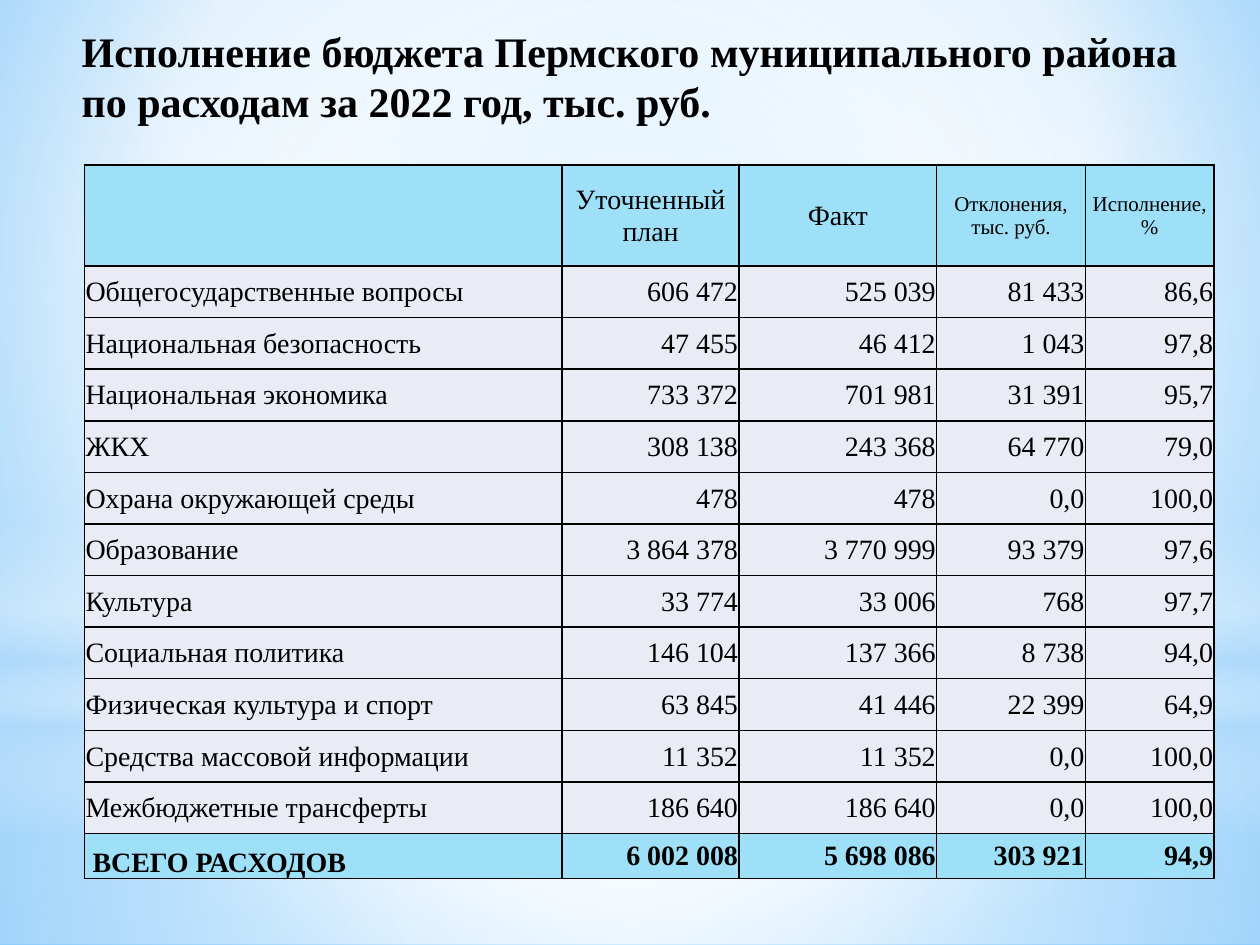
import pptx
import pptx.util
import pptx.oxml
import pptx.oxml.ns
import pptx.dml.color
import pptx.enum.text
import pptx.enum.shapes

Pt = pptx.util.Pt
ALIGN = pptx.enum.text.PP_ALIGN
ANCHOR = pptx.enum.text.MSO_ANCHOR
SHAPE = pptx.enum.shapes.MSO_SHAPE

# Content
TITLE = "Исполнение бюджета Пермского муниципального района по расходам за 2022 год, тыс. руб."
HEAD = ["", "Уточненный план", "Факт", "Отклонения,\nтыс. руб.", "Исполнение, %"]
ROWS = [
    ("Общегосударственные вопросы", "606 472", "525 039", "81 433", "86,6"),
    ("Национальная безопасность", "47 455", "46 412", "1 043", "97,8"),
    ("Национальная экономика", "733 372", "701 981", "31 391", "95,7"),
    ("ЖКХ", "308 138", "243 368", "64 770", "79,0"),
    ("Охрана окружающей среды", "478", "478", "0,0", "100,0"),
    ("Образование", "3 864 378", "3 770 999", "93 379", "97,6"),
    ("Культура", "33 774", "33 006", "768", "97,7"),
    ("Социальная политика", "146 104", "137 366", "8 738", "94,0"),
    ("Физическая культура и спорт", "63 845", "41 446", "22 399", "64,9"),
    ("Средства массовой информации", "11 352", "11 352", "0,0", "100,0"),
    ("Межбюджетные трансферты", "186 640", "186 640", "0,0", "100,0"),
]
TOTAL = (" ВСЕГО РАСХОДОВ", "6 002 008", "5 698 086", "303 921", "94,9")

THEME = {
    "font": "Times New Roman", "ink": "000000",
    "band": "9EE0F8", "cell": "E9EBF5",
    "title": 24, "body": 16, "small": 12,
}

# Gradient stops: position, colour, opacity in percent
MID = (50, 50, 50, 50)
BACK = [(0, "9ED5FF", 100), (60, "FFFFFF", 100), (100, "5BB9FF", 100)]
GLOW = [  # shape, box, stops, focus (None means top to bottom)
    (SHAPE.RECTANGLE, (0, 402, 720, 138),
     [(0, "FFFFFF", 91), (37, "FFFFFF", 76), (100, "B4DCFA", 79)], MID),
    (SHAPE.RECTANGLE, (0, 0, 720, 402),
     [(0, "FFFFFF", 89), (48, "FFFFFF", 62), (100, "B4DCFA", 79)], MID),
    (SHAPE.RECTANGLE, (0, 297, 720, 180),
     [(0, "FFFFFF", 0), (29, "FFFFFF", 30), (45, "B4DCFA", 40),
      (55, "FFFFFF", 26), (65, "B4DCFA", 60), (100, "FFFFFF", 0)], None),
    (SHAPE.OVAL, (0, 126, 720, 402),
     [(0, "FFFFFF", 100), (56, "FFFFFF", 0)], MID),
]

COLS = [273, 101, 113, 85, 73.5]
HIGH = [57.7] + [29.5] * len(ROWS) + [25.7]
SIDES = ("lnL", "lnR", "lnT", "lnB")
NS = pptx.oxml.ns.nsdecls("a")


def rgb(code):
    return pptx.dml.color.RGBColor.from_string(code)


def blend(fill, stops, focus):
    """Give a fill its gradient stops, round or top to bottom."""
    fill.gradient()
    old = fill._xPr.find(pptx.oxml.ns.qn("a:gradFill"))
    list_ = "".join(
        f'<a:gs pos="{at * 1000}"><a:srgbClr val="{code}">'
        f'<a:alpha val="{seen * 1000}"/></a:srgbClr></a:gs>'
        for at, code, seen in stops)
    if focus:
        left, top, right, base = (n * 1000 for n in focus)
        way = (f'<a:path path="circle"><a:fillToRect l="{left}" t="{top}" '
               f'r="{right}" b="{base}"/></a:path>')
    else:
        way = '<a:lin ang="5400000" scaled="0"/>'
    new = pptx.oxml.parse_xml(
        f'<a:gradFill {NS} rotWithShape="1"><a:gsLst>{list_}</a:gsLst>{way}</a:gradFill>')
    old.getparent().replace(old, new)


def write(frame, text, size=THEME["body"], bold=False, align=ALIGN.LEFT):
    """Put text in a frame, one paragraph a line."""
    frame.word_wrap = True
    frame.text = text
    for para in frame.paragraphs:
        para.alignment = align
        font = para.font
        for run in para.runs:
            font = run.font
        font.name, font.size, font.bold = THEME["font"], Pt(size), bold
        font.color.rgb = rgb(THEME["ink"])


def frame_cell(cell):
    """Draw a thin line on each side of a cell."""
    props = cell._tc.get_or_add_tcPr()
    for spot, side in enumerate(SIDES):
        props.insert(spot, pptx.oxml.parse_xml(
            f'<a:{side} {NS} w="12700"><a:solidFill><a:srgbClr val="{THEME["ink"]}"/>'
            f'</a:solidFill></a:{side}>'))


def main():
    deck = pptx.Presentation()
    deck.slide_width, deck.slide_height = Pt(720), Pt(540)
    slide = deck.slides.add_slide(deck.slide_layouts[6])

    # Backdrop
    blend(slide.background.fill, BACK, (20, 10, 20, 60))
    for kind, box, stops, focus in GLOW:
        shape = slide.shapes.add_shape(kind, *map(Pt, box))
        shape.shadow.inherit = False
        shape.line.fill.background()
        blend(shape.fill, stops, focus)

    # Title
    frame = slide.shapes.add_textbox(Pt(36.7), Pt(9.4), Pt(648), Pt(73.4)).text_frame
    frame.margin_left, frame.margin_right, frame.margin_top = Pt(10), Pt(0), Pt(5)
    write(frame, TITLE, size=THEME["title"], bold=True)

    # Table
    grid = [HEAD, *ROWS, TOTAL]
    table = slide.shapes.add_table(
        len(grid), len(COLS), Pt(48.3), Pt(94.3), Pt(sum(COLS)), Pt(sum(HIGH))).table
    table.first_row = table.horz_banding = False
    for col, wide in zip(table.columns, COLS):
        col.width = Pt(wide)
    for row, high in zip(table.rows, HIGH):
        row.height = Pt(high)
    last = len(grid) - 1
    for r, row in enumerate(grid):
        for c, text in enumerate(row):
            cell = table.cell(r, c)
            cell.margin_left = cell.margin_right = cell.margin_top = Pt(0.6)
            cell.margin_bottom = Pt(0)
            cell.vertical_anchor = ANCHOR.BOTTOM if (r, c) == (last, 0) else ANCHOR.MIDDLE
            cell.fill.solid()
            cell.fill.fore_color.rgb = rgb(THEME["band" if r in (0, last) else "cell"])
            align = ALIGN.CENTER if r == 0 else ALIGN.RIGHT if c else ALIGN.LEFT
            size = THEME["small" if r == 0 and c > 2 else "body"]
            write(cell.text_frame, text, size=size, bold=r == last, align=align)
            frame_cell(cell)

    deck.save("out.pptx")


if __name__ == "__main__":
    main()
